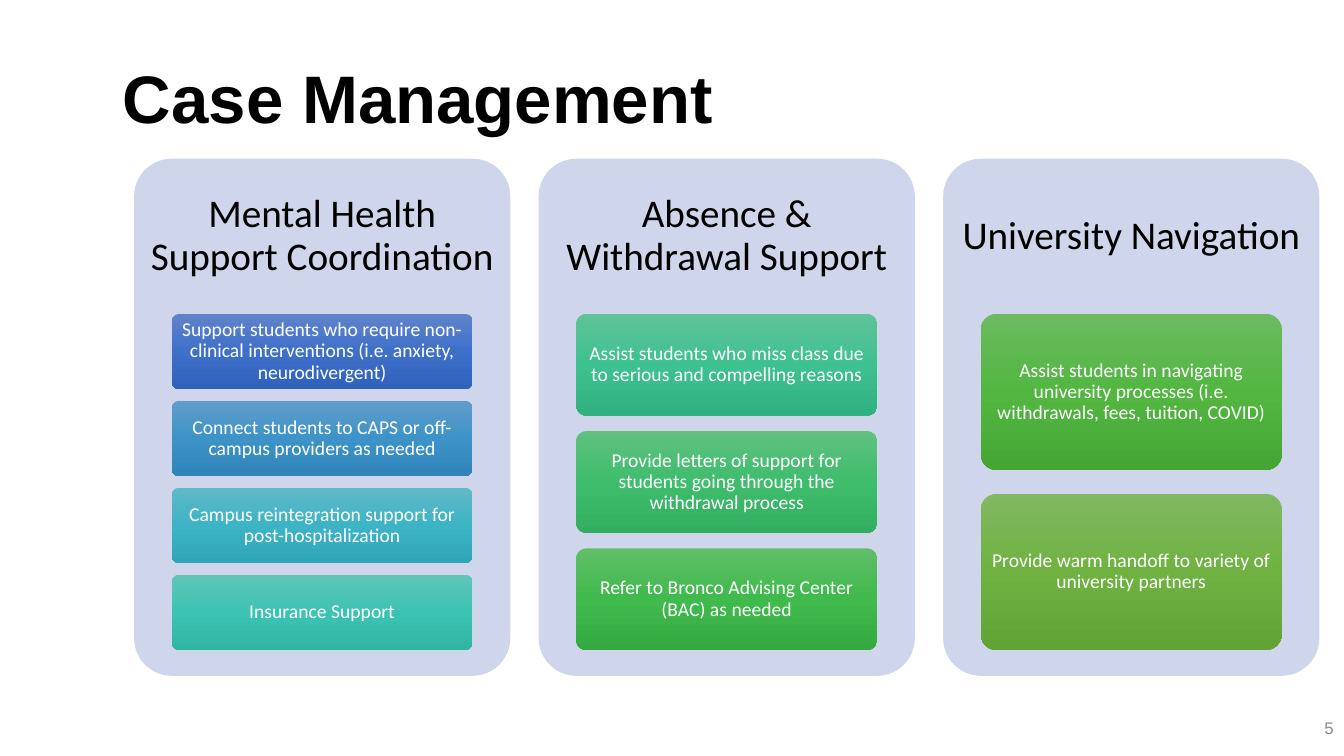
import copy

import pptx
import pptx.dml.color
import pptx.enum.shapes
import pptx.enum.text
import pptx.util

Cm = pptx.util.Cm
ALIGN = pptx.enum.text.PP_ALIGN
ROUNDED = pptx.enum.shapes.MSO_SHAPE.ROUNDED_RECTANGLE

COLORS = {"ink": "000000", "panel": "CFD5EA", "card_text": "FFFFFF", "number": "8C8C8C"}

# Each column: heading, then cards with their top, middle and bottom shades
COLUMNS = [
    ("Mental Health Support Coordination", [
        ("Support students who require non-clinical interventions (i.e. anxiety, neurodivergent)",
         ("6183CB", "3E70CA", "3062BB")),
        ("Connect students to CAPS or off-campus providers as needed",
         ("619DC9", "3D93C8", "3084B9")),
        ("Campus reintegration support for post-hospitalization",
         ("61B8C7", "3DB4C6", "30A5B7")),
        ("Insurance Support", ("60C5B7", "3DC3B3", "30B4A3")),
    ]),
    ("Absence & Withdrawal Support", [
        ("Assist students who miss class due to serious and compelling reasons",
         ("60C39A", "3DC18F", "31B080")),
        ("Provide letters of support for students going through the withdrawal process",
         ("60C17F", "3FBD6D", "33AD5F")),
        ("Refer to Bronco Advising Center (BAC) as needed",
         ("60BE68", "40B94D", "34AA41")),
    ]),
    ("University Navigation", [
        ("Assist students in navigating university processes (i.e. withdrawals, fees, tuition, COVID)",
         ("6CBB61", "52B641", "46A635")),
        ("Provide warm handoff to variety of university partners",
         ("81B861", "6FB242", "62A336")),
    ]),
]
CARD_GAP = 2 / 13  # share of a card's height


def rgb(value):
    return pptx.dml.color.RGBColor.from_string(value)


def write(shape, text, size, font, color, align=ALIGN.CENTER, bold=False, inset=None):
    """Put one vertically centred paragraph in a shape; inset is (x, y) in cm."""
    frame = shape.text_frame
    frame.word_wrap = True
    frame.vertical_anchor = pptx.enum.text.MSO_ANCHOR.MIDDLE
    if inset:
        frame.margin_left = frame.margin_right = Cm(inset[0])
        frame.margin_top = frame.margin_bottom = Cm(inset[1])
    frame.text = text
    paragraph = frame.paragraphs[0]
    paragraph.alignment = align
    paragraph.line_spacing = 0.9
    paragraph.font.size = pptx.util.Pt(size)
    paragraph.font.name = font
    paragraph.font.bold = bold
    paragraph.font.color.rgb = rgb(color)


def add_text(slide, box, *args, **style):
    write(slide.shapes.add_textbox(*map(Cm, box)), *args, **style)


def add_rounded(slide, box):
    shape = slide.shapes.add_shape(ROUNDED, *map(Cm, box))
    shape.adjustments[0] = 0.1
    shape.shadow.inherit = False
    shape.line.fill.background()
    return shape


def shade(fill, shades):
    """Fill from top to bottom through three evenly spaced shades."""
    fill.gradient()
    fill.gradient_angle = 270
    stop_list = fill._fill._gradFill.gsLst
    stop_list.append(copy.deepcopy(stop_list[0]))
    for stop, position, color in zip(fill.gradient_stops, (0, 0.5, 1), shades):
        stop.position = position
        stop.color.rgb = rgb(color)


def add_cards(slide, box, cards):
    left, top, width, height = box
    card_height = height / (len(cards) + (len(cards) - 1) * CARD_GAP)
    pitch = card_height * (1 + CARD_GAP)
    for row, (text, shades) in enumerate(cards):
        card = add_rounded(slide, (left, top + row * pitch, width, card_height))
        shade(card.fill, shades)
        write(card, text, 14, "Calibri", COLORS["card_text"], inset=(0.1, 0.08))


def add_column(slide, box, heading, cards):
    left, top, width, height = box
    panel = add_rounded(slide, box)
    panel.fill.solid()
    panel.fill.fore_color.rgb = rgb(COLORS["panel"])
    add_text(slide, (left, top, width, 0.3 * height), heading, 28, "Calibri",
             COLORS["ink"], inset=(0.3, 0.3))
    add_cards(slide, (left + 0.1 * width, top + 0.3 * height, 0.8 * width, 0.65 * height), cards)


def add_columns(slide, box):
    left, top, width, height = box
    column_width = 9.48
    pitch = (width - column_width) / (len(COLUMNS) - 1)
    for index, (heading, cards) in enumerate(COLUMNS):
        add_column(slide, (left + index * pitch, top, column_width, height), heading, cards)


def main():
    deck = pptx.Presentation()
    deck.slide_width, deck.slide_height = Cm(33.87), Cm(19.05)
    slide = deck.slides.add_slide(deck.slide_layouts[6])
    add_text(slide, (2.85, 1.02, 28.68, 3.07), "Case Management", 48, "Arial",
             COLORS["ink"], align=ALIGN.LEFT, bold=True)
    add_columns(slide, (3.38, 4, 29.87, 13.03))
    add_text(slide, (32.49, 17.86, 1.37, 1.02), "5", 12, "Arial",
             COLORS["number"], align=ALIGN.RIGHT)
    deck.save("out.pptx")


if __name__ == "__main__":
    main()
